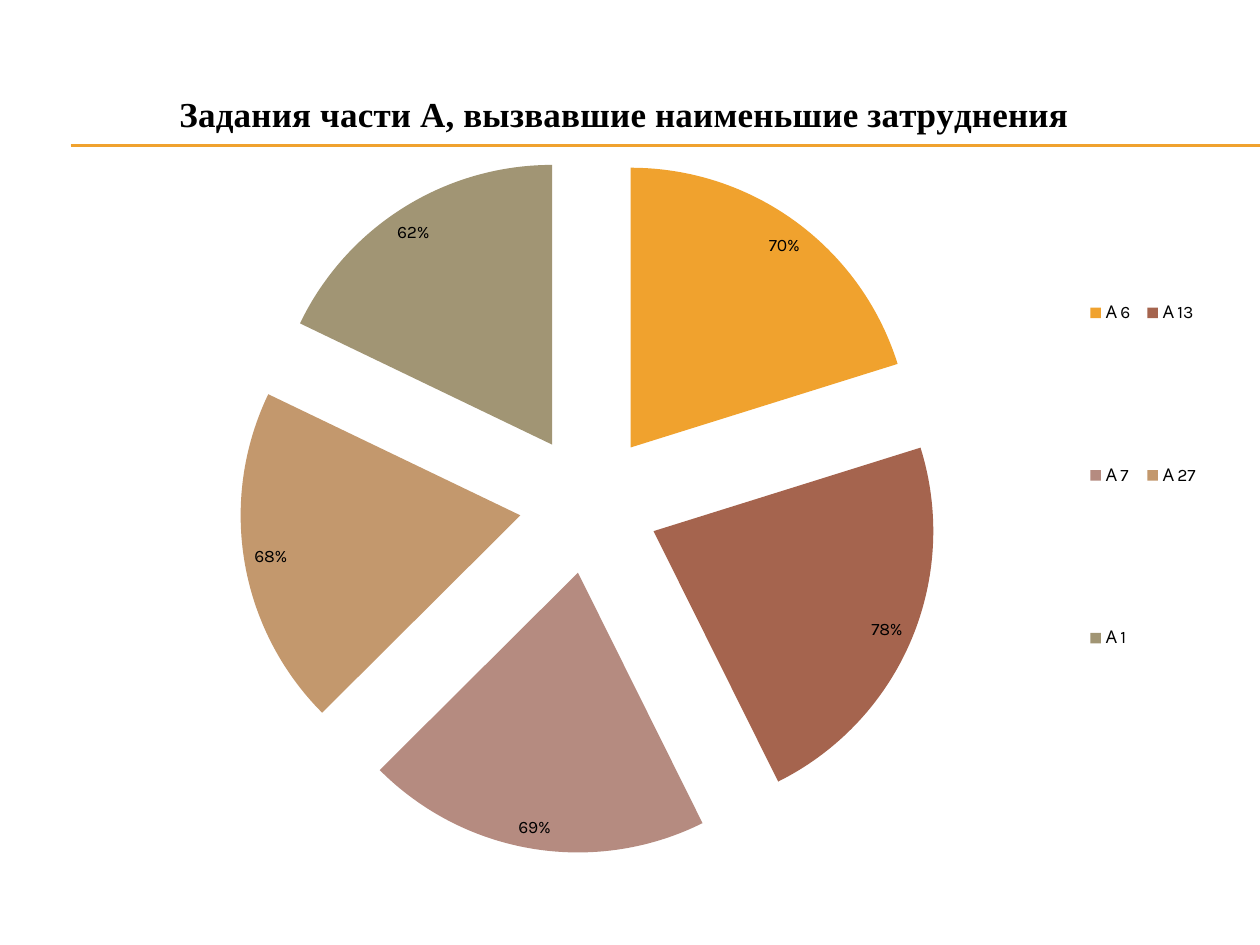
from lxml.etree import SubElement
from pptx import Presentation
from pptx.chart.data import CategoryChartData
from pptx.dml.color import RGBColor
from pptx.enum.chart import XL_CHART_TYPE as ChartType
from pptx.enum.chart import XL_LABEL_POSITION as LabelPosition
from pptx.enum.chart import XL_LEGEND_POSITION as LegendPosition
from pptx.enum.shapes import MSO_CONNECTOR as Connector
from pptx.oxml import parse_xml
from pptx.oxml.ns import nsdecls, qn
from pptx.util import Inches, Pt

COLORS = {
    "text": "000000",
    "orange": "F0A22E",
    "rust": "A5644E",
    "rose": "B58B80",
    "tan": "C3986D",
    "olive": "A19574",
}
# task: (share, colour)
TASKS = {
    "А 6": (0.70, "orange"),
    "А 13": (0.78, "rust"),
    "А 7": (0.69, "rose"),
    "А 27": (0.68, "tan"),
    "А 1": (0.62, "olive"),
}


def color(name):
    return RGBColor.from_string(COLORS[name])


def format_font(font, name="Karla", size=10, bold=False, fill="text"):
    font.name, font.size, font.bold = name, Pt(size), bold
    font.color.rgb = color(fill)


def write_text(text_frame, text, **font_format):
    run = text_frame.paragraphs[0].add_run()
    run.text = text
    format_font(run.font, **font_format)


def manual_layout(x, y, width, height, inner=False):
    """Return a chart layout element; values are fractions of the chart."""
    values = {"layoutTarget": "inner"} if inner else {}
    values.update(xMode="edge", yMode="edge", x=x, y=y, w=width, h=height)
    items = "".join(f'<c:{tag} val="{value}"/>' for tag, value in values.items())
    return parse_xml(
        f'<c:layout {nsdecls("c")}><c:manualLayout>{items}</c:manualLayout></c:layout>'
    )


def place(element, layout, after=None):
    """Put the layout in a chart part, first or after the child named."""
    for old in element.findall(qn("c:layout")):
        element.remove(old)
    if after:
        element.find(qn(after)).addnext(layout)
    else:
        element.insert(0, layout)


class SlideBuilder:
    def __init__(self, slide):
        self.slide = slide
        self.line_color = "orange"
        self.line_width = 0.75
        self.title_format = {"name": "Times New Roman", "size": 20, "bold": True}

    def rule(self, left, right, top):
        line = self.slide.shapes.add_connector(
            Connector.STRAIGHT, Inches(left), Inches(top), Inches(right), Inches(top)
        )
        line.line.color.rgb = color(self.line_color)
        line.line.width = Pt(self.line_width)
        SubElement(line._element.spPr, qn("a:effectLst"))

    def exploded_pie(self, title, tasks, left, top, width, height, explosion):
        data = CategoryChartData(number_format="0%")
        data.categories = list(tasks)
        data.add_series("Series 1", [share for share, _ in tasks.values()])
        chart = self.slide.shapes.add_chart(
            ChartType.PIE, Inches(left), Inches(top), Inches(width), Inches(height), data
        ).chart
        format_font(chart.font)

        write_text(chart.chart_title.text_frame, title, **self.title_format)
        chart.chart_title.include_in_layout = False

        chart.has_legend = True
        chart.legend.position = LegendPosition.RIGHT
        chart.legend.include_in_layout = False
        format_font(chart.legend.font)
        place(chart.legend._element, manual_layout(0.89, 0.12, 0.11, 0.78), "c:legendPos")

        plot = chart.plots[0]
        plot.vary_by_categories = True
        place(plot._element.getparent(), manual_layout(0.17, 0.11, 0.6, 0.87, inner=True))

        series = plot.series[0]
        for index, (_, fill) in enumerate(tasks.values()):
            point_fill = series.points[index].format.fill
            point_fill.solid()
            point_fill.fore_color.rgb = color(fill)
        explosion_xml = f'<c:explosion {nsdecls("c")} val="{explosion}"/>'
        series._element.find(qn("c:dPt")).addprevious(parse_xml(explosion_xml))

        plot.has_data_labels = True
        labels = plot.data_labels
        labels.show_value = True
        labels.show_percentage = False
        labels.number_format = "0%"
        labels.number_format_is_linked = False
        labels.position = LabelPosition.BEST_FIT
        format_font(labels.font)


def main():
    presentation = Presentation()
    presentation.slide_width, presentation.slide_height = Inches(10), Inches(7.5)
    blank_layout = presentation.slide_layouts[6]
    builder = SlideBuilder(presentation.slides.add_slide(blank_layout))
    for top in (1.15, 1.16):
        builder.rule(0.56, 10, top)
    builder.exploded_pie(
        "Задания части А, вызвавшие наименьшие затруднения",
        TASKS, 0.33, 0.5, 9.25, 6.42, explosion=25,
    )
    presentation.save("out.pptx")


if __name__ == "__main__":
    main()
